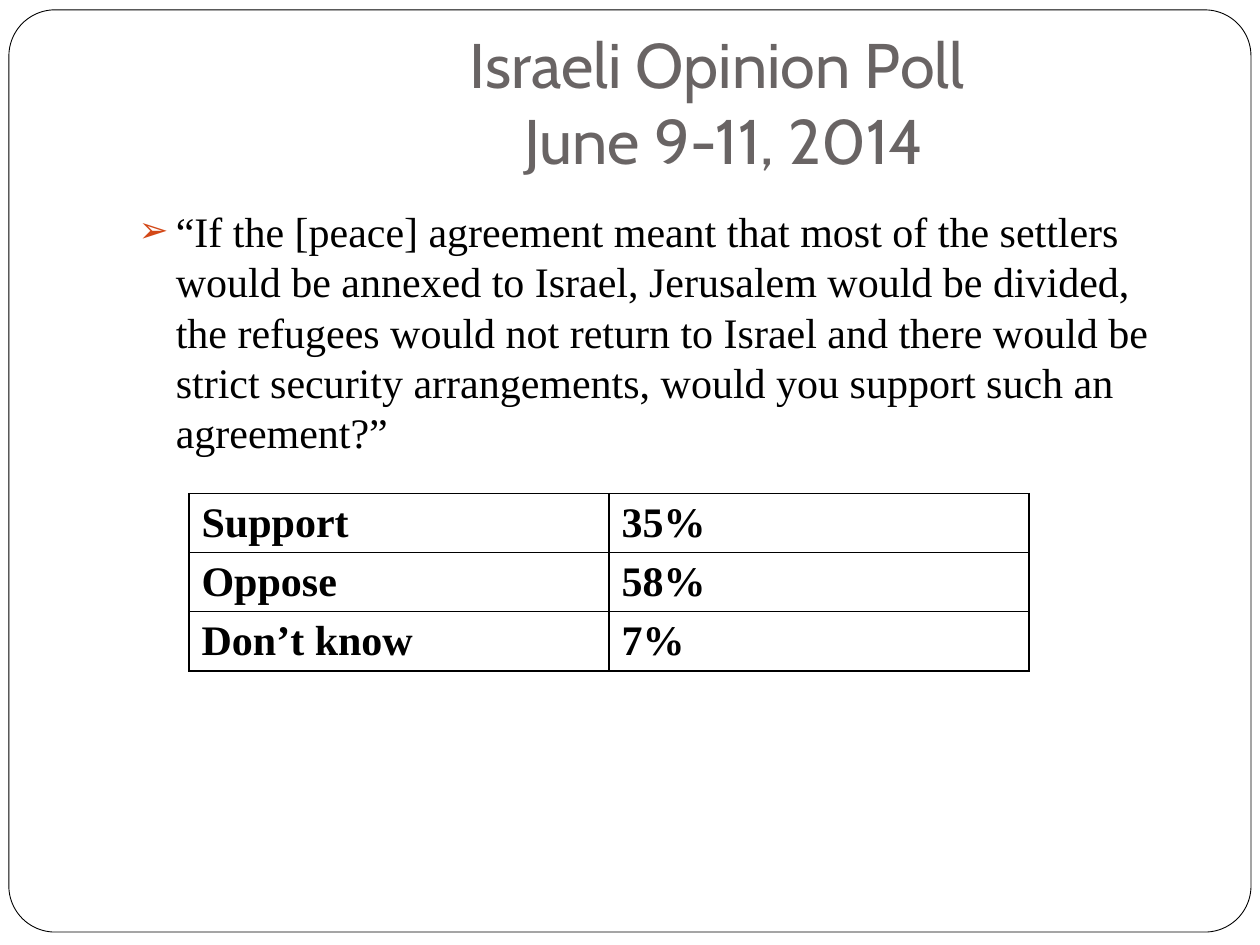
from dataclasses import dataclass

from lxml import etree
from pptx import Presentation
from pptx.dml.color import RGBColor
from pptx.enum.shapes import MSO_SHAPE
from pptx.enum.text import MSO_ANCHOR, MSO_AUTO_SIZE, PP_ALIGN
from pptx.oxml.ns import qn
from pptx.util import Cm, Pt

ROUND_RECT = MSO_SHAPE.ROUNDED_RECTANGLE
BOTTOM = MSO_ANCHOR.BOTTOM
CENTER, LEFT = PP_ALIGN.CENTER, PP_ALIGN.LEFT
NO_AUTOFIT = MSO_AUTO_SIZE.NONE


@dataclass
class Theme:
    paper: str = "FFFFFF"
    ink: str = "000000"
    title: str = "696464"
    accent: str = "D34817"
    title_font: str = "Cabin"
    body_font: str = "Times New Roman"
    title_size: int = 36
    body_size: int = 24


class SlideBuilder:
    """Holds the theme and the slide being built."""

    def __init__(self, slide, theme):
        self.s = slide
        self.t = theme

    def place(self, sp, x, y, w, h):
        sp.left, sp.top, sp.width, sp.height = Cm(x), Cm(y), Cm(w), Cm(h)

    def run(self, p, text, font, size, color, bold=False):
        r = p.add_run()
        r.text = text
        r.font.name, r.font.size, r.font.bold = font, Pt(size), bold
        r.font.color.rgb = RGBColor.from_string(color)

    def body_run(self, p, text, bold=False):
        self.run(p, text, self.t.body_font, self.t.body_size, self.t.ink, bold)

    def frame(self, x, y, w, h):
        sp = self.s.shapes.add_shape(ROUND_RECT, Cm(x), Cm(y), Cm(w), Cm(h))
        sp.adjustments[0] = 0.05
        sp.shadow.inherit = False
        sp.fill.solid()
        sp.fill.fore_color.rgb = RGBColor.from_string(self.t.paper)
        sp.line.color.rgb = RGBColor.from_string(self.t.ink)
        sp.line.width = Pt(0.5)
        self.s.shapes._spTree.insert(2, sp._element)  # behind the placeholders

    def title(self, lines, x, y, w, h):
        sp = self.s.shapes.title
        self.place(sp, x, y, w, h)
        tf = sp.text_frame
        tf.auto_size, tf.vertical_anchor = NO_AUTOFIT, BOTTOM
        tf.margin_bottom = Cm(0.25)
        p = tf.paragraphs[0]
        p.alignment = CENTER
        for i, line in enumerate(lines):
            if i:
                p.add_line_break()
            self.run(p, line, self.t.title_font, self.t.title_size, self.t.title)

    def bullets(self, items, x, y, w, h):
        sp = self.s.placeholders[1]
        self.place(sp, x, y, w, h)
        tf = sp.text_frame
        tf.auto_size = NO_AUTOFIT
        for i, item in enumerate(items):
            p = tf.add_paragraph() if i else tf.paragraphs[0]
            p.alignment, p.space_before = LEFT, Pt(5.8)
            pPr = p._p.get_or_add_pPr()
            pPr.set("marL", str(Cm(0.75)))
            pPr.set("indent", str(-Cm(0.75)))
            color = etree.SubElement(pPr, qn("a:buClr"))
            etree.SubElement(color, qn("a:srgbClr"), val=self.t.accent)
            etree.SubElement(pPr, qn("a:buSzPct"), val="85000")
            etree.SubElement(pPr, qn("a:buChar"), char="➢")
            self.body_run(p, item)

    def borders(self, cell):
        tcPr = cell._tc.get_or_add_tcPr()
        for side in ("a:lnL", "a:lnR", "a:lnT", "a:lnB"):
            ln = etree.SubElement(tcPr, qn(side), w=str(Pt(1)))
            fill = etree.SubElement(ln, qn("a:solidFill"))
            etree.SubElement(fill, qn("a:srgbClr"), val=self.t.ink)

    def table(self, rows, x, y, w, row_h):
        shape = self.s.shapes.add_table(len(rows), len(rows[0]), Cm(x), Cm(y),
                                        Cm(w), Cm(row_h * len(rows)))
        table = shape.table
        table.first_row = table.horz_banding = False
        for i, row in enumerate(rows):
            for j, text in enumerate(row):
                cell = table.cell(i, j)
                self.borders(cell)
                cell.fill.solid()
                cell.fill.fore_color.rgb = RGBColor.from_string(self.t.paper)
                self.body_run(cell.text_frame.paragraphs[0], text, bold=True)


def main():
    prs = Presentation()
    prs.slide_width, prs.slide_height = Cm(25.4), Cm(19.05)
    b = SlideBuilder(prs.slides.add_slide(prs.slide_layouts[1]), Theme())

    # Page frame
    b.frame(0.18, 0.2, 25.04, 18.59)

    # Heading and poll question
    b.title(["Israeli Opinion Poll ", "June 9-11, 2014"], 5.5, 0.64, 18.2, 3.18)
    b.bullets(["“If the [peace] agreement meant that most of the settlers would be "
               "annexed to Israel, Jerusalem would be divided, the refugees would "
               "not return to Israel and there would be strict security "
               "arrangements, would you support such an agreement?”"],
              2.54, 4.01, 21.59, 12.7)

    # Poll results
    b.table([("Support", "35%"), ("Oppose", "58%"), ("Don’t know", "7%")],
            3.81, 9.95, 16.93, 1.19)

    prs.save("out.pptx")


if __name__ == "__main__":
    main()
